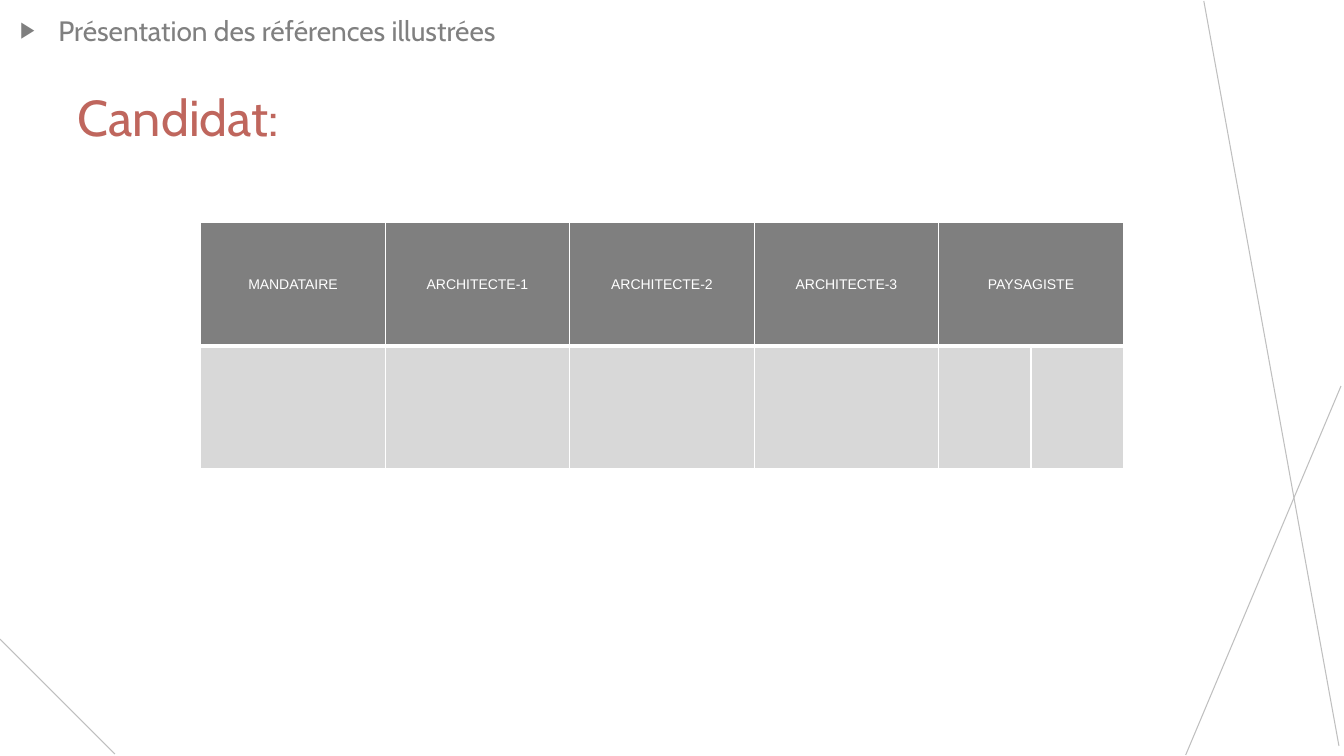
from dataclasses import dataclass

from lxml.etree import SubElement
from pptx import Presentation
from pptx.dml.color import RGBColor
from pptx.enum.shapes import MSO_CONNECTOR
from pptx.enum.text import MSO_ANCHOR as Anchor, MSO_AUTO_SIZE as AutoSize, PP_ALIGN as Align
from pptx.oxml.ns import qn
from pptx.util import Inches, Pt

GREY, LIGHT_GREY, WHITE = "7F7F7F", "D8D8D8", "FFFFFF"


@dataclass(frozen=True)
class Ray:
    x1: float
    y1: float
    x2: float
    y2: float


@dataclass(frozen=True)
class Member:
    role: str
    widths: tuple[float, ...]


RAYS = [
    Ray(11.94, 0.01, 13.28, 7.4),
    Ray(13.3, 3.83, 11.76, 7.49),
    Ray(0, 6.34, 1.14, 7.48),
]
TEAM = [
    Member("MANDATAIRE", (1.83,)),
    Member("ARCHITECTE-1", (1.83,)),
    Member("ARCHITECTE-2", (1.83,)),
    Member("ARCHITECTE-3", (1.83,)),
    Member("PAYSAGISTE", (0.915, 0.915)),
]


def rgb(value: str) -> RGBColor:
    return RGBColor.from_string(value)


def write(frame, text: str, *, size: float, font: str, color: str,
          align=Align.LEFT, anchor=Anchor.TOP):
    frame.word_wrap = True
    frame.vertical_anchor = anchor
    paragraph = frame.paragraphs[0]
    paragraph.alignment = align
    run = paragraph.add_run()
    run.text = text
    run.font.size = Pt(size)
    run.font.name = font
    run.font.color.rgb = rgb(color)
    return paragraph


def add_bullet(paragraph, char: str, color: str, percent: int, indent: float) -> None:
    properties = paragraph._p.get_or_add_pPr()
    properties.set("marL", str(Inches(indent)))
    properties.set("indent", str(-Inches(indent)))
    tint = SubElement(properties, qn("a:buClr"))
    SubElement(tint, qn("a:srgbClr"), val=color)
    SubElement(properties, qn("a:buSzPct"), val=str(percent * 1000))
    SubElement(properties, qn("a:buFont"), typeface="Arial")
    SubElement(properties, qn("a:buChar"), char=char)


def draw_ray(slide, ray: Ray) -> None:
    line = slide.shapes.add_connector(
        MSO_CONNECTOR.STRAIGHT,
        Inches(ray.x1), Inches(ray.y1), Inches(ray.x2), Inches(ray.y2))
    line.line.color.rgb = rgb("BFBFBF")
    line.line.width = Pt(0.75)
    SubElement(line._element.spPr, qn("a:effectLst"))


def paint_cell(cell, fill: str, top: float, bottom: float) -> None:
    properties = cell._tc.get_or_add_tcPr()
    for side, width in {"L": 1, "R": 1, "T": top, "B": bottom}.items():
        border = SubElement(properties, qn(f"a:ln{side}"), w=str(Pt(width)))
        paint = SubElement(border, qn("a:solidFill"))
        SubElement(paint, qn("a:srgbClr"), val=WHITE)
    cell.fill.solid()
    cell.fill.fore_color.rgb = rgb(fill)


def draw_team(slide, team: list[Member]) -> None:
    widths = [width for member in team for width in member.widths]
    table = slide.shapes.add_table(
        2, len(widths), Inches(1.99), Inches(2.21), Inches(sum(widths)), Inches(2.44)).table
    for column, width in zip(table.columns, widths):
        column.width = Inches(width)
    for index in range(len(widths)):
        paint_cell(table.cell(0, index), GREY, 1, 3)
        paint_cell(table.cell(1, index), LIGHT_GREY, 3, 1)
    start = 0
    for member in team:
        end = start + len(member.widths)
        header = table.cell(0, start)
        if end - start > 1:
            header.merge(table.cell(0, end - 1))
        header.margin_left = header.margin_right = 0
        header.margin_top = header.margin_bottom = 0
        write(header.text_frame, member.role, size=10, font="Arial", color=WHITE,
              align=Align.CENTER)
        header.vertical_anchor = Anchor.MIDDLE
        start = end


def main() -> None:
    deck = Presentation()
    deck.slide_width, deck.slide_height = Inches(13.33), Inches(7.5)
    slide = deck.slides.add_slide(deck.slide_layouts[5])

    for ray in RAYS:
        draw_ray(slide, ray)

    candidate = slide.shapes.title
    candidate.left, candidate.top = Inches(0.67), Inches(0.78)
    candidate.width, candidate.height = Inches(10.99), Inches(0.75)
    candidate.text_frame.auto_size = AutoSize.NONE
    write(candidate.text_frame, "Candidat:", size=36, font="Cabin", color="BF665D",
          anchor=Anchor.MIDDLE)

    section = slide.shapes.add_textbox(Inches(0.1), Inches(0.08), Inches(8.78), Inches(0.49))
    heading = write(section.text_frame, "Présentation des références illustrées",
                    size=20, font="Cabin", color="808080")
    heading.space_before = Pt(10)
    add_bullet(heading, "▶", GREY, 80, 0.38)

    draw_team(slide, TEAM)
    deck.save("out.pptx")


if __name__ == "__main__":
    main()
